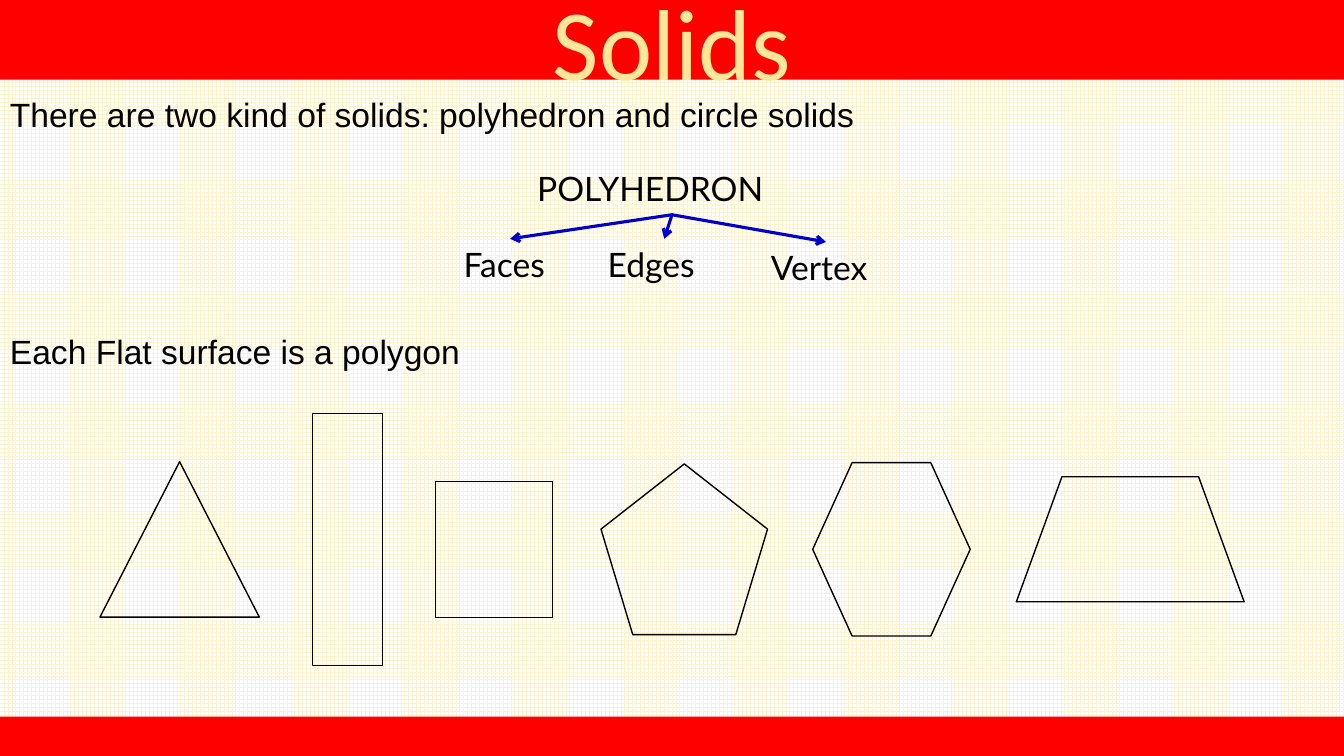
from dataclasses import dataclass

from pptx import Presentation
from pptx.dml.color import RGBColor
from pptx.enum.dml import MSO_PATTERN as Pattern
from pptx.enum.shapes import MSO_CONNECTOR as Link, MSO_SHAPE as Kind
from pptx.enum.text import MSO_ANCHOR as Anchor, MSO_AUTO_SIZE as Fit, PP_ALIGN as Align
from pptx.oxml import parse_xml
from pptx.oxml.ns import nsdecls
from pptx.slide import Slide
from pptx.util import Pt

BLACK = RGBColor(0x00, 0x00, 0x00)
WHITE = RGBColor(0xFF, 0xFF, 0xFF)
RED = RGBColor(0xFF, 0x00, 0x00)
BLUE = RGBColor(0x00, 0x00, 0xCC)
CREAM = RGBColor(0xFF, 0xF2, 0xCC)
GOLD = RGBColor(0xFF, 0xE6, 0x99)

WIDTH, HEIGHT = 960, 540
HEAD, FOOT = 56.9, 28.1
APEX = (480, 153.4)


@dataclass
class Label:
    text: str
    left: float
    top: float
    width: float
    face: str = "Lato"


@dataclass
class Figure:
    kind: Kind
    left: float
    top: float
    width: float
    height: float
    flip: bool = False


LABELS = [
    Label("There are two kind of solids: polyhedron and circle solids", 0, 63.4, 945.4, "Arial"),
    Label("POLYHEDRON", 376.6, 116.6, 207.4),
    Label("Faces", 324, 170.6, 80.6),
    Label("Edges", 427, 170.6, 95),
    Label("Vertex", 543.6, 172.8, 92.2),
    Label("Each Flat surface is a polygon", 0, 232.6, 508.3, "Arial"),
]
FIGURES = [
    Figure(Kind.ISOSCELES_TRIANGLE, 71.4, 329.8, 113.8, 111),
    Figure(Kind.RECTANGLE, 223.2, 295.2, 50.2, 180),
    Figure(Kind.RECTANGLE, 311.2, 344, 83.5, 97),
    Figure(Kind.REGULAR_PENTAGON, 429.3, 331.4, 119, 122),
    Figure(Kind.HEXAGON, 580.5, 330.5, 112.5, 123.8),
    Figure(Kind.FLOWCHART_MANUAL_OPERATION, 726, 340.6, 162.7, 89.3, True),
]
TIPS = [(364.4, 170.6), (474.5, 170.6), (590, 172.8)]


def style(target: object, values: dict) -> None:
    for name, value in values.items():
        setattr(target, name, value)


def place(left: float, top: float, width: float, height: float) -> dict:
    return {"left": Pt(left), "top": Pt(top), "width": Pt(width), "height": Pt(height)}


def add_title(slide: Slide, text: str) -> None:
    title = slide.shapes.title
    style(title, place(0, 0, WIDTH, HEAD))
    title.fill.solid()
    title.fill.fore_color.rgb = RED
    frame = title.text_frame
    frame.text = text
    style(frame, {"auto_size": Fit.NONE, "vertical_anchor": Anchor.MIDDLE, "word_wrap": True})
    para = frame.paragraphs[0]
    para.alignment = Align.CENTER
    font = para.runs[0].font
    style(font, {"name": "Calibri", "size": Pt(72)})
    font.color.rgb = GOLD
    # Thin black outline around the letters
    para.runs[0]._r.get_or_add_rPr().insert(0, parse_xml(
        f'<a:ln {nsdecls("a")} w="9525"><a:solidFill><a:srgbClr val="{BLACK}"/></a:solidFill></a:ln>'))


def add_label(slide: Slide, label: Label) -> None:
    box = slide.shapes.add_textbox(**place(label.left, label.top, label.width, 36))
    frame = box.text_frame
    style(frame, {"word_wrap": True, "auto_size": Fit.SHAPE_TO_FIT_TEXT})
    run = frame.paragraphs[0].add_run()
    run.text = label.text
    style(run.font, {"name": label.face, "size": Pt(24)})
    run.font.color.rgb = BLACK


def add_figure(slide: Slide, fig: Figure) -> None:
    shape = slide.shapes.add_shape(fig.kind, **place(fig.left, fig.top, fig.width, fig.height))
    shape.shadow.inherit = False
    shape.fill.background()
    shape.line.width = Pt(1)
    shape.line.color.rgb = BLACK
    if fig.flip:
        shape._element.spPr.xfrm.set("flipV", "1")


def add_arrow(slide: Slide, tip: tuple[float, float]) -> None:
    arrow = slide.shapes.add_connector(Link.STRAIGHT, *map(Pt, APEX + tip))
    arrow.line.width = Pt(2.25)
    arrow.line.color.rgb = BLUE
    arrow.line._get_or_add_ln().append(parse_xml(f'<a:tailEnd {nsdecls("a")} type="arrow"/>'))
    arrow._element.spPr.append(parse_xml(f'<a:effectLst {nsdecls("a")}/>'))


def add_foot(slide: Slide) -> None:
    bar = slide.shapes.add_shape(Kind.RECTANGLE, **place(0, HEIGHT - FOOT, WIDTH, FOOT))
    bar.shadow.inherit = False
    bar.fill.solid()
    bar.fill.fore_color.rgb = RED
    bar.line.fill.background()


def main() -> None:
    deck = Presentation()
    style(deck, {"slide_width": Pt(WIDTH), "slide_height": Pt(HEIGHT)})
    slide = deck.slides.add_slide(deck.slide_layouts[5])

    # Grid paper
    paper = slide.background.fill
    paper.patterned()
    paper.pattern = Pattern.LARGE_GRID
    paper.fore_color.rgb = CREAM
    paper.back_color.rgb = WHITE

    # Red bands
    add_title(slide, "Solids")
    add_foot(slide)

    # Words, polygons and arrows
    for label in LABELS:
        add_label(slide, label)
    for fig in FIGURES:
        add_figure(slide, fig)
    for tip in TIPS:
        add_arrow(slide, tip)

    deck.save("out.pptx")


if __name__ == "__main__":
    main()
